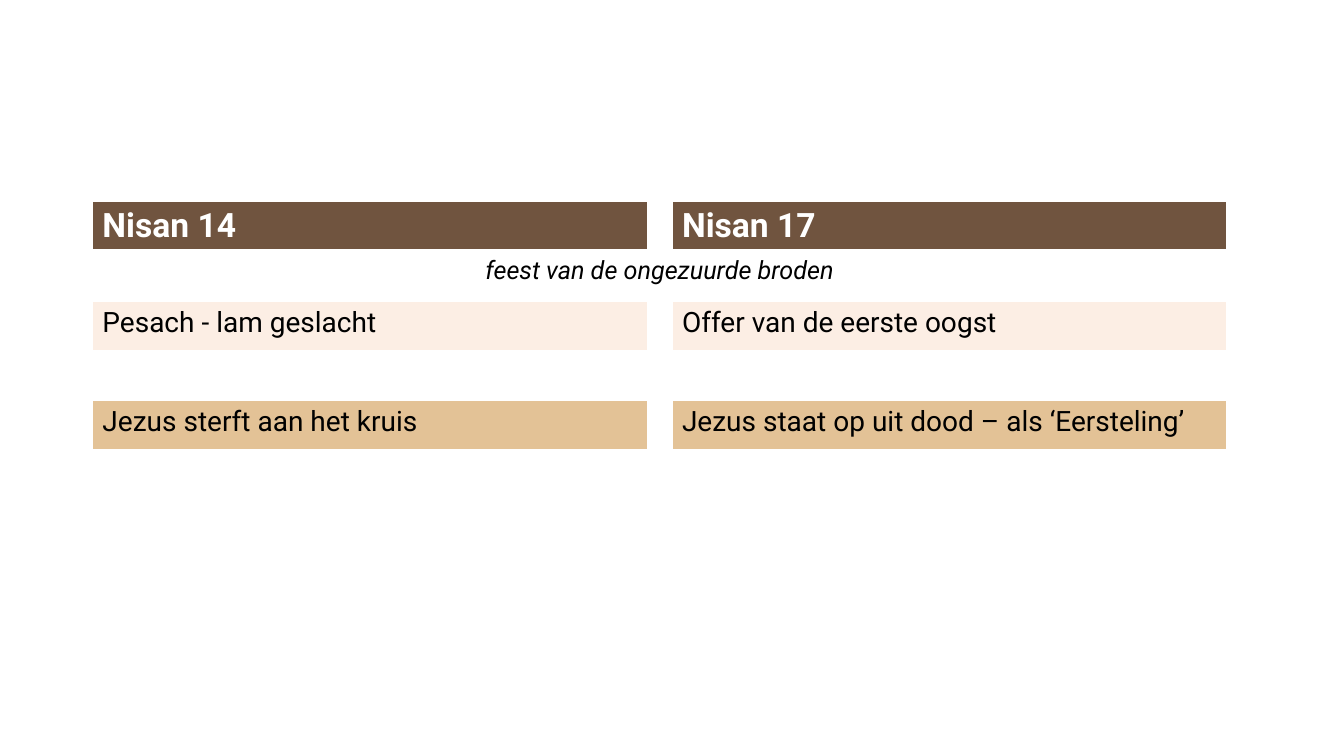
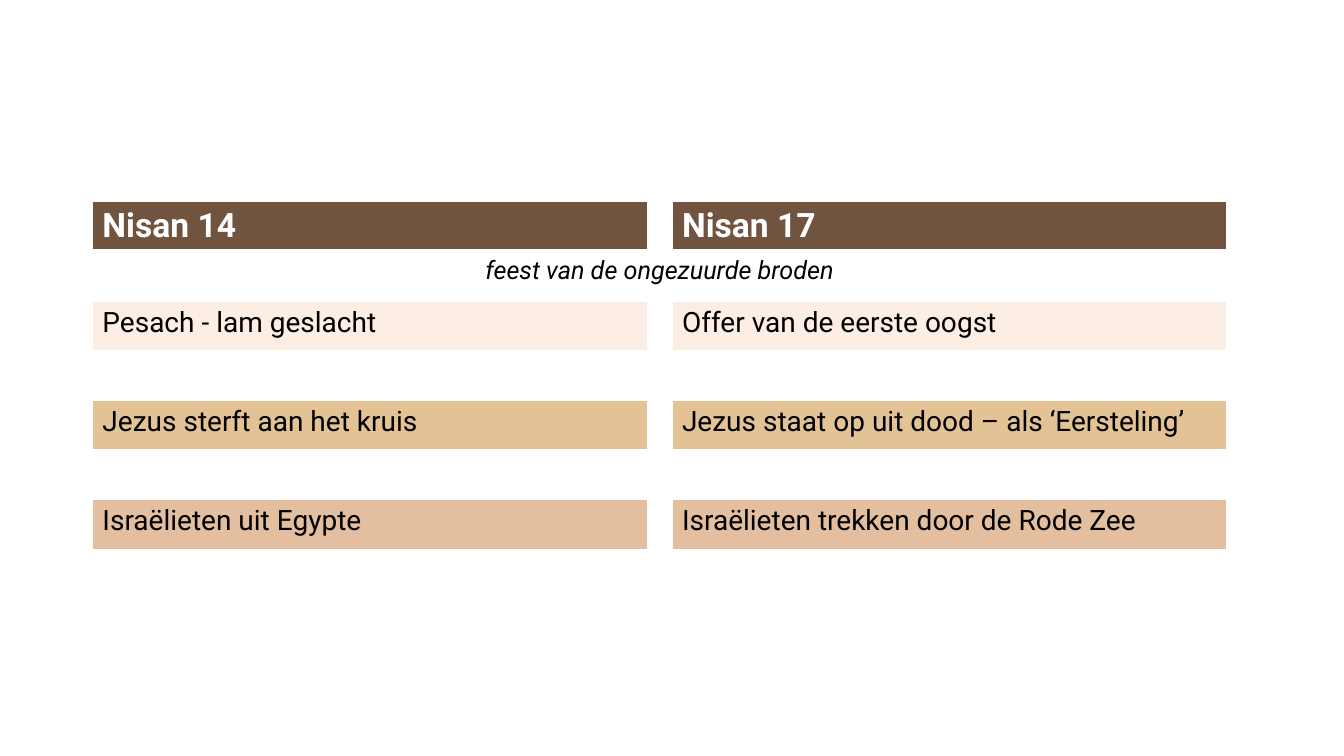
from dataclasses import dataclass

import pptx
import pptx.dml.color
import pptx.enum.text
import pptx.oxml
import pptx.oxml.ns
import pptx.util

PX = 6350  # EMU per px, 144 px to the inch
SLIDE_W, SLIDE_H = 1920, 1080
TABLE_X, TABLE_Y = 132, 288
COL_WIDTHS = (793, 35, 793, 33)
ROW_H, ROW_COUNT = 71, 7
TEXT_COLS = (0, 2)
FEAST_ROW = 1
FONT = "Roboto"
ALIGN = pptx.enum.text.PP_ALIGN

COLORS = {
    "white": "FFFFFF",
    "black": "000000",
    "brown": "70543F",
    "cream": "FCEEE4",
    "sand": "E3C296",
    "peach": "E3BFA0",
}


@dataclass(frozen=True)
class TextStyle:
    size: int
    color: str = "black"
    bold: bool = False
    italic: bool = False
    align: ALIGN = ALIGN.LEFT


@dataclass(frozen=True)
class Band:
    """A pair of filled cells on one table row."""
    row: int
    fill: str
    texts: tuple[str, str]
    style: TextStyle


HEADER = TextStyle(24, color="white", bold=True)
FEAST = TextStyle(18, italic=True, align=ALIGN.CENTER)
BODY = TextStyle(20)

BASE_BANDS = (
    Band(0, "brown", ("Nisan 14", "Nisan 17"), HEADER),
    Band(2, "cream", ("Pesach - lam geslacht", "Offer van de eerste oogst"), BODY),
    Band(4, "sand", ("Jezus sterft aan het kruis",
                     "Jezus staat op uit dood – als ‘Eersteling’"), BODY),
)
EXODUS_BAND = Band(6, "peach", ("Israëlieten uit Egypte",
                                "Israëlieten trekken door de Rode Zee"), BODY)


def px(length: int) -> pptx.util.Emu:
    return pptx.util.Emu(length * PX)


def rgb(name: str) -> pptx.dml.color.RGBColor:
    return pptx.dml.color.RGBColor.from_string(COLORS[name])


def fill_cell(cell, color: str) -> None:
    cell.fill.solid()
    cell.fill.fore_color.rgb = rgb(color)


def add_borders(cell, row: int) -> None:
    """White rules; the header row has a thicker one below it."""
    widths = {"lnL": 1, "lnR": 1}
    if row == 0:
        widths["lnT"] = 1
    widths["lnB"] = 3 if row == 0 else 1
    tc_pr = cell._tc.get_or_add_tcPr()
    for i, (side, width) in enumerate(widths.items()):
        tc_pr.insert(i, pptx.oxml.parse_xml(
            f'<a:{side} {pptx.oxml.ns.nsdecls("a")} w="{pptx.util.Pt(width)}">'
            f'<a:solidFill><a:srgbClr val="{COLORS["white"]}"/></a:solidFill>'
            f'</a:{side}>'))


def write_cell(cell, text: str, style: TextStyle) -> None:
    p = cell.text_frame.paragraphs[0]
    p.alignment = style.align
    p.space_before = p.space_after = pptx.util.Pt(6)
    r = p.add_run()
    r.text = text
    r.font.name = FONT
    r.font.size = pptx.util.Pt(style.size)
    r.font.bold = style.bold
    r.font.italic = style.italic
    r.font.color.rgb = rgb(style.color)


def add_nisan_slide(prs, bands: tuple[Band, ...]) -> None:
    s = prs.slides.add_slide(prs.slide_layouts[6])
    table = s.shapes.add_table(
        ROW_COUNT, len(COL_WIDTHS), px(TABLE_X), px(TABLE_Y),
        px(sum(COL_WIDTHS)), px(ROW_COUNT * ROW_H)).table
    table.first_row = table.horz_banding = False
    for column, width in zip(table.columns, COL_WIDTHS):
        column.width = px(width)
    for i, row in enumerate(table.rows):
        row.height = px(ROW_H)
        for cell in row.cells:
            fill_cell(cell, "white")
            add_borders(cell, i)

    feast = table.cell(FEAST_ROW, 0)
    feast.merge(table.cell(FEAST_ROW, 2))
    write_cell(feast, "feest van de ongezuurde broden", FEAST)

    for band in bands:
        for col, text in zip(TEXT_COLS, band.texts):
            cell = table.cell(band.row, col)
            fill_cell(cell, band.fill)
            write_cell(cell, text, band.style)


def main() -> None:
    prs = pptx.Presentation()
    prs.slide_width, prs.slide_height = px(SLIDE_W), px(SLIDE_H)
    add_nisan_slide(prs, BASE_BANDS)
    add_nisan_slide(prs, BASE_BANDS + (EXODUS_BAND,))
    prs.save("out.pptx")


if __name__ == "__main__":
    main()
